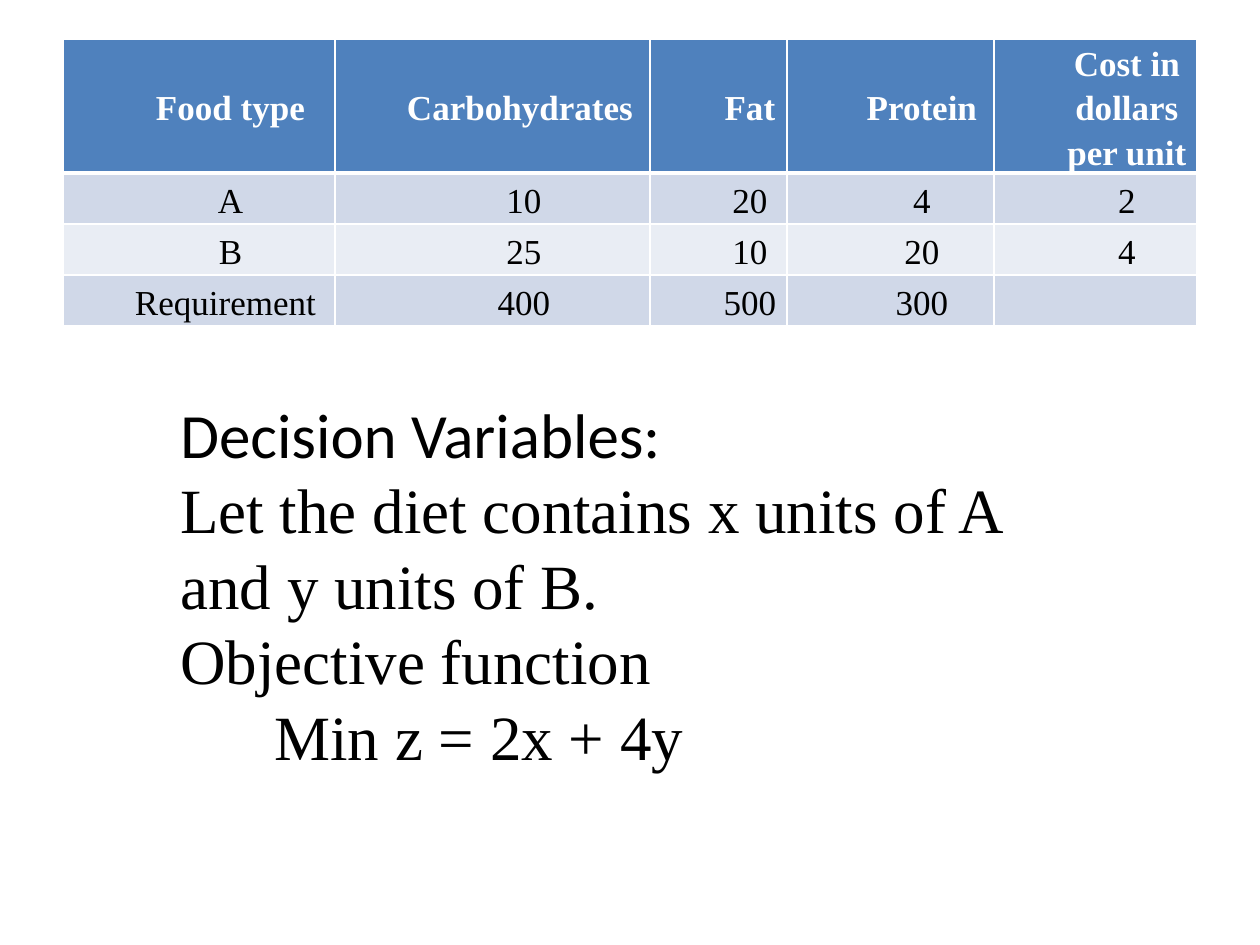
from lxml import etree
from pptx import Presentation
from pptx.dml.color import RGBColor
from pptx.enum.text import MSO_ANCHOR, PP_ALIGN
from pptx.oxml.ns import qn
from pptx.util import Emu, Pt

PX = 914400 // 126
WHITE = RGBColor(0xFF, 0xFF, 0xFF)
BLACK = RGBColor(0, 0, 0)
HEADER_FILL = RGBColor(0x4F, 0x81, 0xBD)
BAND_FILLS = (RGBColor(0xE9, 0xED, 0xF4), RGBColor(0xD0, 0xD8, 0xE8))
LEFT, CENTER = PP_ALIGN.LEFT, PP_ALIGN.CENTER
MIDDLE = MSO_ANCHOR.MIDDLE
SERIF, SANS = "Times New Roman", "Calibri"

FOODS = [
    ("Food type", "Carbohydrates", "Fat", "Protein", "Cost in dollars per unit"),
    ("A", "10", "20", "4", "2"),
    ("B", "25", "10", "20", "4"),
    ("Requirement", "400", "500", "300", ""),
]
LEFT_ALIGNED = {"Carbohydrates", "Requirement"}
COL_WIDTHS = (272, 315, 137, 207, 203)
ROW_HEIGHTS = (133, 51, 51, 51)
TABLE_AT = (63, 39)
CELL_INDENT = 63

# text, font, left indent
MODEL = [
    ("Decision Variables:", SANS, 0),
    ("Let the diet contains x units of A and y units of B.", SERIF, 0),
    ("Objective function", SERIF, 0),
    ("Min z = 2x + 4y", SERIF, 94),
]
MODEL_AT = (168, 389, 916, 394)


def px(n):
    return Emu(n * PX)


def set_attrs(obj, **values):
    for name, value in values.items():
        setattr(obj, name, value)


def indent(p, n):
    pPr = p._p.get_or_add_pPr()
    pPr.set("marL", str(px(n)))
    pPr.set("indent", "0")


def add_run(p, text, color, **font):
    r = p.add_run()
    r.text = text
    set_attrs(r.font, **font)
    r.font.color.rgb = color


def add_borders(cell, bottom, top):
    """Draw white borders; widths are in points."""
    tcPr = cell._tc.get_or_add_tcPr()
    widths = {"lnL": 1, "lnR": 1, "lnT": top, "lnB": bottom}
    for i, (tag, width) in enumerate(widths.items()):
        ln = etree.Element(qn(f"a:{tag}"), w=str(Pt(width)))
        fill = etree.SubElement(ln, qn("a:solidFill"))
        etree.SubElement(fill, qn("a:srgbClr"), val=str(WHITE))
        tcPr.insert(i, ln)


def format_cell(cell, text, row):
    header = row == 0
    set_attrs(cell, vertical_anchor=MIDDLE, margin_left=px(9),
              margin_right=px(9), margin_top=0, margin_bottom=0)
    cell.fill.solid()
    cell.fill.fore_color.rgb = HEADER_FILL if header else BAND_FILLS[row % 2]
    add_borders(cell, bottom=3 if header else 1, top=3 if row == 1 else 1)
    p = cell.text_frame.paragraphs[0]
    if text:
        set_attrs(p, alignment=LEFT if text in LEFT_ALIGNED else CENTER,
                  line_spacing=1.15)
        indent(p, CELL_INDENT)
        add_run(p, text, WHITE if header else BLACK,
                name=SERIF, size=Pt(20), bold=header)
    else:
        p.font.size = Pt(20)


def add_food_table(slide):
    size = (sum(COL_WIDTHS), sum(ROW_HEIGHTS))
    table = slide.shapes.add_table(len(FOODS), len(COL_WIDTHS),
                                   *map(px, TABLE_AT + size)).table
    for col, width in zip(table.columns, COL_WIDTHS):
        col.width = px(width)
    for i, (values, height) in enumerate(zip(FOODS, ROW_HEIGHTS)):
        table.rows[i].height = px(height)
        for j, text in enumerate(values):
            format_cell(table.cell(i, j), text, i)


def add_model(slide):
    tf = slide.shapes.add_textbox(*map(px, MODEL_AT)).text_frame
    tf.word_wrap = True
    for i, (text, font, left) in enumerate(MODEL):
        p = tf.add_paragraph() if i else tf.paragraphs[0]
        indent(p, left)
        add_run(p, text, BLACK, name=font, size=Pt(36))


def main():
    prs = Presentation()
    set_attrs(prs, slide_width=px(1260), slide_height=px(945))
    slide = prs.slides.add_slide(prs.slide_layouts[6])
    add_food_table(slide)
    add_model(slide)
    prs.save("out.pptx")


if __name__ == "__main__":
    main()
